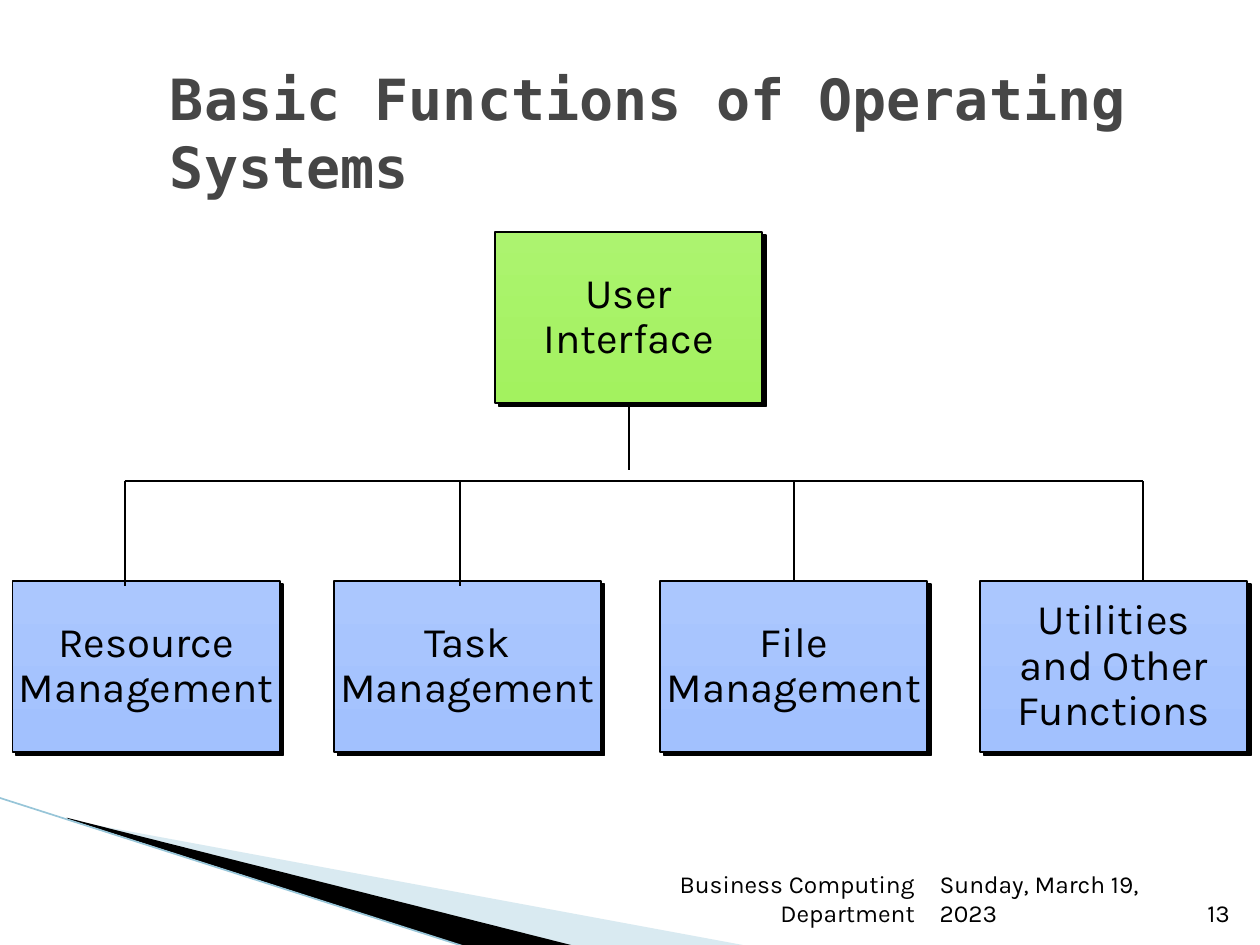
from dataclasses import dataclass

from lxml.etree import SubElement
from pptx import Presentation
from pptx.dml.color import RGBColor as RGB
from pptx.enum.shapes import MSO_CONNECTOR as CONN, MSO_SHAPE as SHAPE
from pptx.enum.text import MSO_ANCHOR as ANCHOR, PP_ALIGN as ALIGN
from pptx.oxml.ns import qn
from pptx.util import Inches, Pt


@dataclass(frozen=True)
class Theme:
    ink: str = "000000"
    title: str = "464646"
    green: tuple = ("ACF36F", "A3F25F")
    blue: tuple = ("ABC7FE", "A2C1FE")
    swoosh: str = "A0CBDC"
    edge: str = "97C5D8"
    title_font: str = "DejaVu Sans Mono"
    body_font: str = "Karla"
    title_size: float = 32.4
    box_size: int = 24
    footer_size: int = 14


class Deck:
    def __init__(self, theme):
        self.theme = theme
        self.prs = Presentation()
        self.prs.slide_width, self.prs.slide_height = Inches(10), Inches(7.5)
        self.s = self.prs.slides.add_slide(self.prs.slide_layouts[6])

    def fill_text(self, tf, text, size, font=None, color=None, bold=False, align=ALIGN.LEFT, spacing=None):
        tf.text = text
        for p in tf.paragraphs:
            p.alignment = align
            if spacing:
                p.line_spacing = spacing
            for r in p.runs:
                r.font.size, r.font.bold = Pt(size), bold
                r.font.name = font or self.theme.body_font
                r.font.color.rgb = RGB.from_string(color or self.theme.ink)

    def text(self, x, y, w, h, text, size, anchor=ANCHOR.BOTTOM, **style):
        tf = self.s.shapes.add_textbox(*map(Inches, (x, y, w, h))).text_frame
        tf.word_wrap, tf.vertical_anchor = True, anchor
        self.fill_text(tf, text, size, **style)

    def box(self, x, y, w, h, text, colors):
        sp = self.s.shapes.add_shape(SHAPE.RECTANGLE, *map(Inches, (x, y, w, h)))
        sp.fill.gradient()
        sp.fill.gradient_angle = 270
        for stop, color in zip(sp.fill.gradient_stops, colors):
            stop.color.rgb = RGB.from_string(color)
        sp.line.color.rgb, sp.line.width = RGB.from_string(self.theme.ink), Pt(1)
        sp.shadow.inherit = False
        effects = sp._element.spPr.find(qn("a:effectLst"))
        shadow = SubElement(effects, qn("a:outerShdw"), blurRad="0", dist=str(Pt(2.8)),
                            dir="2700000", algn="ctr", rotWithShape="0")
        SubElement(shadow, qn("a:srgbClr"), val=self.theme.ink)
        tf = sp.text_frame
        tf.word_wrap, tf.vertical_anchor = False, ANCHOR.MIDDLE
        self.fill_text(tf, text, self.theme.box_size, align=ALIGN.CENTER, spacing=0.9)
        return sp

    def line(self, x1, y1, x2, y2, color=None, width=1, start=None, end=None):
        c = self.s.shapes.add_connector(CONN.STRAIGHT, *map(Inches, (x1, y1, x2, y2)))
        c.line.color.rgb, c.line.width = RGB.from_string(color or self.theme.ink), Pt(width)
        SubElement(c._element.spPr, qn("a:effectLst"))
        if start:
            c.begin_connect(start, 2)
        if end:
            c.end_connect(end, 0)

    def polygon(self, points, color, alpha=100):
        first, *rest = [(Inches(x), Inches(y)) for x, y in points]
        fb = self.s.shapes.build_freeform(*first)
        fb.add_line_segments(rest, close=True)
        sp = fb.convert_to_shape()
        sp.shadow.inherit = False
        sp.line.fill.background()
        sp.fill.solid()
        sp.fill.fore_color.rgb = RGB.from_string(color)
        if alpha < 100:
            clr = sp._element.spPr.find(qn("a:solidFill"))[0]
            SubElement(clr, qn("a:alpha"), val=str(alpha * 1000))


def main():
    t = Theme()
    d = Deck(t)

    d.polygon([(0.55, 6.51), (5.95, 7.51), (4.56, 7.51), (0.55, 6.5)], t.swoosh, 40)
    d.polygon([(0.53, 6.49), (4.57, 7.51), (3.72, 7.52), (0.54, 6.5)], t.ink)
    d.line(-0.01, 6.33, 3.71, 7.52, t.edge, 0.95)

    for x, w, text, align in [
        (7.36, 2.1, "Sunday, March 19, 2023", ALIGN.LEFT),
        (4.79, 2.57, "Business Computing Department", ALIGN.RIGHT),
        (9.46, 0.4, "13", ALIGN.RIGHT),
    ]:
        d.text(x, 7.01, w, 0.4, text, t.footer_size, align=align)
    d.text(1.25, 0.42, 8.52, 1.25, "Basic Functions of Operating Systems", t.title_size,
           ANCHOR.MIDDLE, font=t.title_font, color=t.title, bold=True)

    box_w, box_h, row_y, bus_y = 2.12, 1.36, 4.61, 3.82
    root = d.box(3.93, 1.84, box_w, box_h, "User\nInterface", t.green)
    resource, task, files, utilities = [
        d.box(x, row_y, box_w, box_h, text, t.blue)
        for x, text in [
            (0.1, "Resource\nManagement"),
            (2.65, "Task\nManagement"),
            (5.24, "File\nManagement"),
            (7.78, "Utilities\nand Other\nFunctions"),
        ]
    ]

    d.line(4.99, 3.2, 4.99, 3.73, start=root)
    d.line(0.99, bus_y, 9.07, bus_y)
    for x, bottom, target in [(0.99, 4.65, None), (3.65, 4.65, None),
                              (6.3, row_y, files), (9.07, row_y, None)]:
        d.line(x, bus_y, x, bottom, end=target)

    d.prs.save("out.pptx")


if __name__ == "__main__":
    main()
